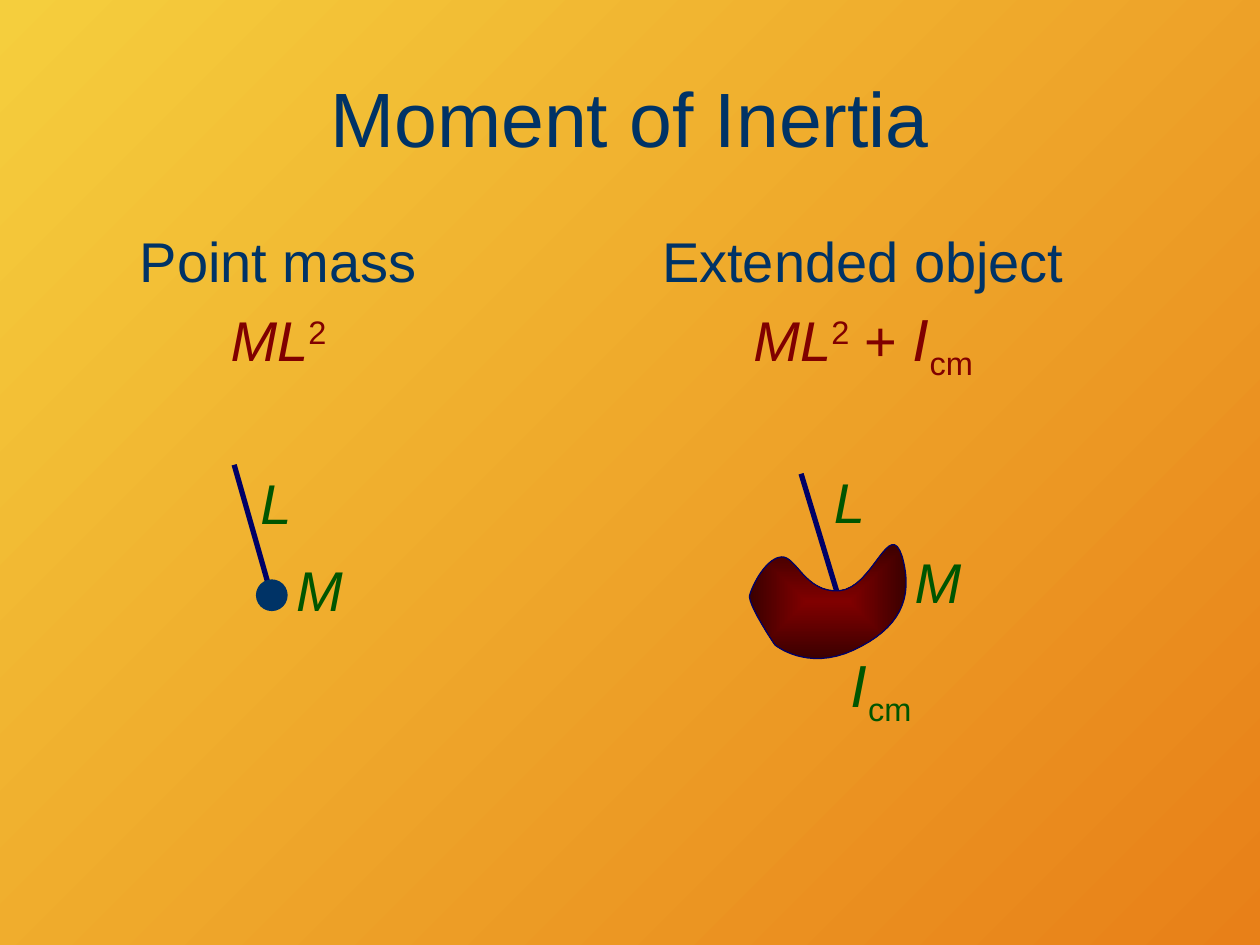
from dataclasses import dataclass
from lxml.etree import SubElement
from pptx import Presentation
from pptx.dml.color import RGBColor
from pptx.enum.shapes import MSO_CONNECTOR, MSO_SHAPE
from pptx.enum.text import MSO_ANCHOR, MSO_AUTO_SIZE, PP_ALIGN
from pptx.oxml.ns import qn
from pptx.util import Cm, Pt


@dataclass(frozen=True)
class Theme:
    font: str = "Arial"
    symbol_font: str = "DejaVu Sans"
    heading: str = "003366"
    formula: str = "800000"
    label: str = "005500"
    rod: str = "000066"
    background: tuple = ("F5CE3D", "E88018")
    body: tuple = ("800000", "3B0000")
    title_size: float = 44
    text_size: float = 32
    rod_width: float = 3
    outline_width: float = 0.75


THEME = Theme()

RUN_STYLES = {
    "plain": (THEME.font, False, 0),
    "variable": (THEME.font, True, 0),
    "symbol": (THEME.symbol_font, True, 0),
    "super": (THEME.font, False, 30000),
    "sub": (THEME.font, False, -25000),
}

MASS = [("M", "variable")]
LENGTH = [("L", "variable")]
POINT_INERTIA = [("ML", "variable"), ("2", "super")]
CM_INERTIA = [("I", "symbol"), ("cm", "sub")]

TITLE = ([("Moment of Inertia", "plain")], (1.27, 0.76, 22.86, 3.18))
COLUMNS = [
    ("Point mass", POINT_INERTIA, (1.27, 4.45, 8.69, 4.45)),
    ("Extended object", POINT_INERTIA + [(" + ", "plain")] + CM_INERTIA,
     (12.17, 4.45, 10.46, 3.89)),
]

LABEL_HEIGHT = 1.63
POINT_ROD = ((5.44, 11.89), (4.72, 9.37))
POINT_BALL = (5.16, 11.68, 0.64, 0.64)
POINT_LABELS = [(MASS, 5.72, 11.07, 1.47), (LENGTH, 5.0, 9.32, 1.14)]

EXTENDED_ROD = ((16.99, 12.32), (16.15, 9.55))
EXTENDED_LABELS = [
    (CM_INERTIA, 16.92, 13.0, 2.01),
    (MASS, 18.19, 10.92, 1.47),
    (LENGTH, 16.56, 9.3, 1.14),
]
BODY_START = (15.75, 11.23)
BODY_CURVES = [
    ((15.44, 11.25), (15.16, 11.81), (15.11, 12.01)),
    ((15.09, 12.22), (15.62, 13.0), (15.62, 13.0)),
    ((15.62, 13.0), (16.26, 13.54), (17.2, 13.11)),
    ((18.14, 12.67), (18.42, 12.07), (18.19, 11.23)),
    ((17.93, 10.41), (17.6, 11.86), (16.92, 11.91)),
    ((16.23, 11.96), (16.05, 11.2), BODY_START),
]
CURVE_STEPS = 16


def rgb(value):
    return RGBColor.from_string(value)


def lengths(values):
    return [Cm(value) for value in values]


def add_runs(paragraph, runs, size, color):
    for text, style in runs:
        family, italic, baseline = RUN_STYLES[style]
        run = paragraph.add_run()
        run.text = text
        run.font.name = family
        run.font.size = Pt(size)
        run.font.italic = italic
        run.font.color.rgb = rgb(color)
        if baseline:
            run.font._element.set("baseline", str(baseline))


def add_title(shapes, runs, box):
    frame = shapes.add_textbox(*lengths(box)).text_frame
    frame.word_wrap = True
    frame.vertical_anchor = MSO_ANCHOR.MIDDLE
    frame.paragraphs[0].alignment = PP_ALIGN.CENTER
    add_runs(frame.paragraphs[0], runs, THEME.title_size, THEME.heading)


def add_column(shapes, heading, formula, box):
    frame = shapes.add_textbox(*lengths(box)).text_frame
    frame.word_wrap = True
    rows = [([(heading, "plain")], THEME.heading), (formula, THEME.formula)]
    for paragraph, (runs, color) in zip(
            (frame.paragraphs[0], frame.add_paragraph()), rows):
        paragraph.alignment = PP_ALIGN.CENTER
        paragraph.space_before = Pt(THEME.text_size * 0.2)
        add_runs(paragraph, runs, THEME.text_size, color)


def add_labels(shapes, labels):
    for runs, left, top, width in labels:
        box = lengths((left, top, width, LABEL_HEIGHT))
        frame = shapes.add_textbox(*box).text_frame
        frame.word_wrap = False
        frame.auto_size = MSO_AUTO_SIZE.SHAPE_TO_FIT_TEXT
        add_runs(frame.paragraphs[0], runs, THEME.text_size, THEME.label)


def add_rod(shapes, ends):
    start, end = ends
    rod = shapes.add_connector(MSO_CONNECTOR.STRAIGHT, *lengths(start + end))
    rod.line.color.rgb = rgb(THEME.rod)
    rod.line.width = Pt(THEME.rod_width)
    SubElement(rod._element.spPr, qn("a:effectLst"))


def add_ball(shapes, box):
    ball = shapes.add_shape(MSO_SHAPE.OVAL, *lengths(box))
    ball.shadow.inherit = False
    ball.fill.solid()
    ball.fill.fore_color.rgb = rgb(THEME.heading)
    ball.line.fill.background()


def color_gradient(fill, colors):
    fill.gradient()
    for stop, color, position in zip(fill.gradient_stops, colors, (0, 1)):
        stop.color.rgb = rgb(color)
        stop.position = position


def outline_points(start, curves):
    for first, second, end in curves:
        for step in range(1, CURVE_STEPS + 1):
            t = step / CURVE_STEPS
            u = 1 - t
            yield tuple(
                Cm(u**3 * a + 3 * u * u * t * b + 3 * u * t * t * c + t**3 * d)
                for a, b, c, d in zip(start, first, second, end))
        start = end


def add_body(shapes):
    builder = shapes.build_freeform(*lengths(BODY_START))
    builder.add_line_segments(outline_points(BODY_START, BODY_CURVES), close=True)
    body = builder.convert_to_shape()
    body.shadow.inherit = False
    color_gradient(body.fill, THEME.body)
    gradient = body._element.spPr.find(qn("a:gradFill"))
    gradient.remove(gradient.find(qn("a:lin")))
    center = SubElement(gradient, qn("a:path"), path="rect")
    SubElement(center, qn("a:fillToRect"),
               {side: "50000" for side in ("l", "t", "r", "b")})
    body.line.color.rgb = rgb(THEME.rod)
    body.line.width = Pt(THEME.outline_width)


def main():
    deck = Presentation()
    deck.slide_width, deck.slide_height = Cm(25.4), Cm(19.05)
    slide = deck.slides.add_slide(deck.slide_layouts[6])
    color_gradient(slide.background.fill, THEME.background)
    slide.background.fill.gradient_angle = 315

    add_title(slide.shapes, *TITLE)
    for column in COLUMNS:
        add_column(slide.shapes, *column)

    point_mass = slide.shapes.add_group_shape().shapes
    add_rod(point_mass, POINT_ROD)
    add_ball(point_mass, POINT_BALL)
    add_labels(point_mass, POINT_LABELS)

    extended_object = slide.shapes.add_group_shape().shapes
    add_rod(extended_object, EXTENDED_ROD)
    add_body(extended_object)
    add_labels(extended_object, EXTENDED_LABELS)

    deck.save("out.pptx")


if __name__ == "__main__":
    main()
